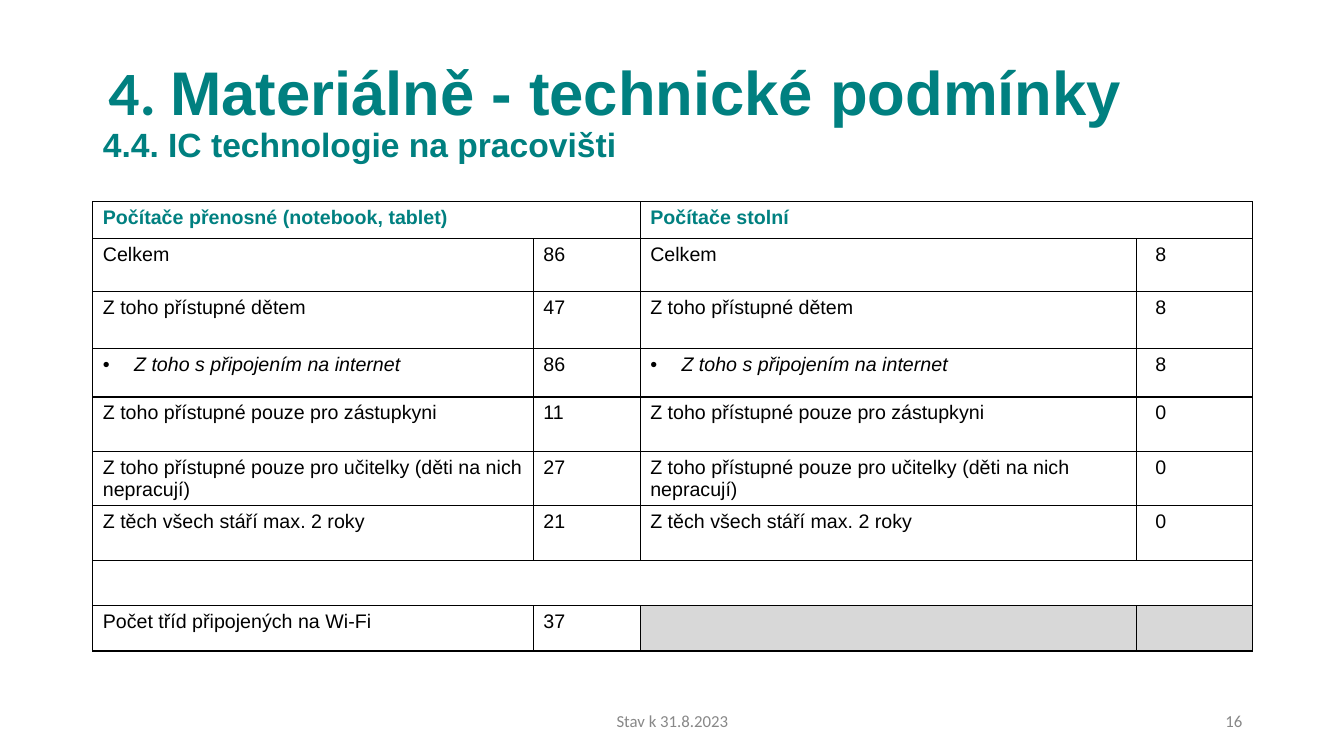
from lxml import etree
from pptx import Presentation
from pptx.dml.color import RGBColor
from pptx.enum import text as t
from pptx.oxml import ns
from pptx.util import Inches, Pt

TEAL = RGBColor(0x00, 0x80, 0x80)
BLACK = RGBColor(0x00, 0x00, 0x00)
GREY = RGBColor(0x88, 0x88, 0x88)
SHADE = RGBColor(0xD8, 0xD8, 0xD8)

COLUMN_WIDTHS = (4.37, 1.06, 4.92, 1.15)
ROW_HEIGHTS = (0.37, 0.52, 0.57, 0.48, 0.54, 0.54, 0.54, 0.45, 0.45)
INTERNET = "Z toho s připojením na internet"
COUNTS = (
    ("Celkem", "86", "8"),
    ("Z toho přístupné dětem", "47", "8"),
    (INTERNET, "86", "8"),
    ("Z toho přístupné pouze pro zástupkyni", "11", "0"),
    ("Z toho přístupné pouze pro učitelky (děti na nich nepracují)", "27", "0"),
    ("Z těch všech stáří max. 2 roky", "21", "0"),
)


def write(paragraph, words, size=14, font="Arial", color=BLACK, bold=False, italic=False):
    run = paragraph.add_run()
    run.text = words
    run.font.size = Pt(size)
    run.font.name = font
    run.font.color.rgb = color
    run.font.bold = bold
    run.font.italic = italic


def indent(paragraph, left, first, bullet=None):
    """Set the left margin and first-line offset, with an optional bullet."""
    properties = paragraph._p.get_or_add_pPr()
    properties.set("marL", str(Inches(left)))
    properties.set("indent", str(Inches(first)))
    if bullet:
        etree.SubElement(properties, ns.qn("a:buFont"), typeface="Arial")
        etree.SubElement(properties, ns.qn("a:buChar"), char=bullet)


def style_cell(cell, shade=None):
    """Give a cell black borders and a plain or shaded ground."""
    properties = cell._tc.get_or_add_tcPr()
    for side in ("lnL", "lnR", "lnT", "lnB"):
        line = etree.SubElement(properties, ns.qn(f"a:{side}"), w=str(Pt(1)))
        solid = etree.SubElement(line, ns.qn("a:solidFill"))
        etree.SubElement(solid, ns.qn("a:srgbClr"), val=str(BLACK))
    if shade is None:
        cell.fill.background()
    else:
        cell.fill.solid()
        cell.fill.fore_color.rgb = shade


def add_title(slide):
    title = slide.shapes.title
    title.left, title.top = Inches(0.92), Inches(0.4)
    title.width, title.height = Inches(11.5), Inches(1.45)
    frame = title.text_frame
    frame.auto_size = t.MSO_AUTO_SIZE.NONE
    frame.vertical_anchor = t.MSO_ANCHOR.MIDDLE
    heading = frame.paragraphs[0]
    heading.alignment = t.PP_ALIGN.LEFT
    heading.line_spacing = 0.9
    write(heading, " ", color=TEAL, bold=True)
    write(heading, "4. ", size=44, font="Calibri", color=TEAL, bold=True)
    write(heading, "Materiálně - technické podmínky", size=44, color=TEAL, bold=True)
    heading.add_line_break()
    write(heading, "4.4. IC technologie na pracovišti", size=24, color=TEAL, bold=True)


def add_footer(slide, words, left, width, alignment):
    box = slide.shapes.add_textbox(Inches(left), Inches(6.95), Inches(width), Inches(0.4))
    frame = box.text_frame
    frame.word_wrap = True
    frame.vertical_anchor = t.MSO_ANCHOR.MIDDLE
    frame.paragraphs[0].alignment = alignment
    write(frame.paragraphs[0], words, size=12, font="Calibri", color=GREY)


def add_computer_table(slide):
    table = slide.shapes.add_table(
        len(ROW_HEIGHTS), len(COLUMN_WIDTHS), Inches(0.92), Inches(2),
        Inches(sum(COLUMN_WIDTHS)), Inches(sum(ROW_HEIGHTS))).table
    table.first_row = table.horz_banding = False
    for column, width in zip(table.columns, COLUMN_WIDTHS):
        column.width = Inches(width)
    for row, height in zip(table.rows, ROW_HEIGHTS):
        row.height = Inches(height)

    def paragraph(row, column):
        return table.cell(row, column).text_frame.paragraphs[0]

    last = len(ROW_HEIGHTS) - 1
    for row in range(last + 1):
        for column in range(len(COLUMN_WIDTHS)):
            shaded = row == last and column >= 2
            style_cell(table.cell(row, column), SHADE if shaded else None)

    headings = ((0, "Počítače přenosné (notebook, tablet)"), (2, "Počítače stolní"))
    for column, heading in headings:
        table.cell(0, column).merge(table.cell(0, column + 1))
        write(paragraph(0, column), heading, color=TEAL, bold=True)

    for row, (label, portable, desktop) in enumerate(COUNTS, start=1):
        nested = label == INTERNET
        for column, count in ((0, portable), (2, desktop)):
            if nested:
                indent(paragraph(row, column), 0.31, -0.31, bullet="•")
            write(paragraph(row, column), label, italic=nested)
            write(paragraph(row, column + 1), count)
        indent(paragraph(row, 3), 0.31, -0.22)

    table.cell(last - 1, 0).merge(table.cell(last - 1, 3))
    write(paragraph(last, 0), "Počet tříd připojených na Wi-Fi")
    write(paragraph(last, 1), "37")


def main():
    deck = Presentation()
    deck.slide_width, deck.slide_height = Inches(13.33), Inches(7.5)
    slide = deck.slides.add_slide(deck.slide_layouts.get_by_name("Title Only"))
    add_title(slide)
    add_computer_table(slide)
    add_footer(slide, "Stav k 31.8.2023", 4.42, 4.5, t.PP_ALIGN.CENTER)
    add_footer(slide, "16", 9.42, 3, t.PP_ALIGN.RIGHT)
    deck.save("out.pptx")


if __name__ == "__main__":
    main()
